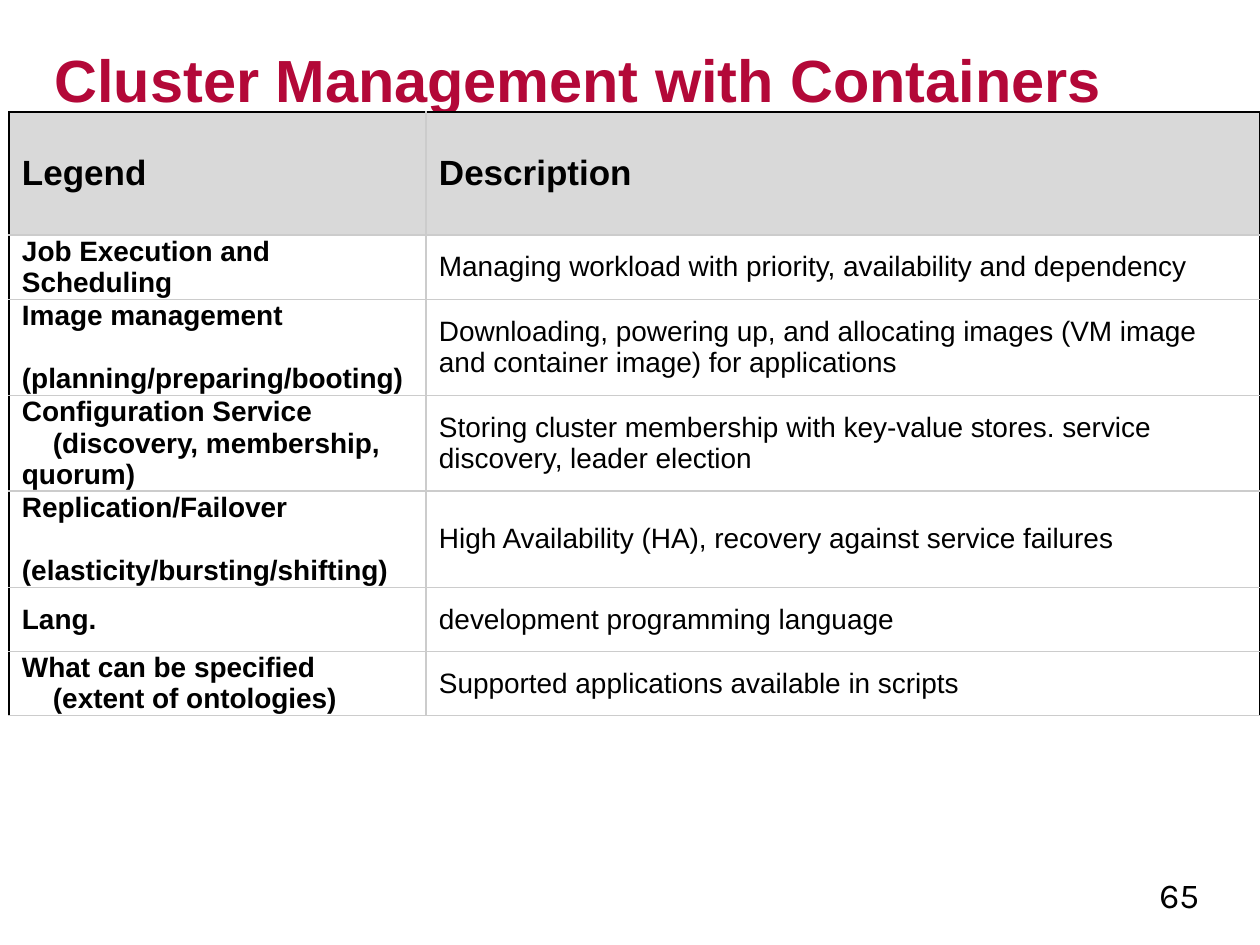
import lxml.etree
import pptx
import pptx.dml.color
import pptx.enum.text
import pptx.oxml.ns
import pptx.util

CRIMSON = pptx.dml.color.RGBColor(0xB3, 0x08, 0x38)
BLACK = pptx.dml.color.RGBColor(0, 0, 0)
RULE_GRAY = pptx.dml.color.RGBColor(0xCC, 0xCC, 0xCC)
HEADER_GRAY = pptx.dml.color.RGBColor(0xD9, 0xD9, 0xD9)
MIDDLE = pptx.enum.text.MSO_ANCHOR.MIDDLE

COLUMN_WIDTHS = (417, 834)
HEADER_HEIGHT, ROW_HEIGHT = 123, 64
INDENT = 31
LINE_GAP = 18.4
ROWS = [
    (["Legend"], "Description"),
    (["Job Execution and Scheduling"],
     "Managing workload with priority, availability and dependency"),
    (["Image management", "(planning/preparing/booting)"],
     "Downloading, powering up, and allocating images (VM image and container image) for applications"),
    (["Configuration Service", "(discovery, membership, quorum)"],
     "Storing cluster membership with key-value stores. service discovery, leader election"),
    (["Replication/Failover", "(elasticity/bursting/shifting)"],
     "High Availability (HA), recovery against service failures"),
    (["Lang."], "development programming language"),
    (["What can be specified", "(extent of ontologies)"],
     "Supported applications available in scripts"),
]


def px(n):
    """Convert pixels to EMU."""
    return pptx.util.Emu(round(n * 914400 / 126))


def place(sp, left, top, width, height):
    """Set the position and size of a shape."""
    sp.left, sp.top, sp.width, sp.height = px(left), px(top), px(width), px(height)


def add_run(p, text, size, color=BLACK, bold=False, font="Arial"):
    """Add one formatted run to a paragraph."""
    r = p.add_run()
    r.text = text
    r.font.size = pptx.util.Pt(size)
    r.font.name = font
    r.font.bold = bold
    r.font.color.rgb = color


def add_title(slide, text):
    """Fill the title placeholder."""
    sp = slide.shapes.title
    place(sp, 42, 0, 1155, 157)
    tf = sp.text_frame
    tf.word_wrap = True
    tf.auto_size = pptx.enum.text.MSO_AUTO_SIZE.NONE
    tf.vertical_anchor = MIDDLE
    p = tf.paragraphs[0]
    p.alignment = pptx.enum.text.PP_ALIGN.LEFT
    add_run(p, text, 34, CRIMSON, True)


def set_borders(cell, black_sides):
    """Draw the four cell borders, black on the given sides."""
    tc_pr = cell._tc.get_or_add_tcPr()
    for side in "LRTB":
        ln = lxml.etree.SubElement(tc_pr, pptx.oxml.ns.qn(f"a:ln{side}"), w="9525")
        fill = lxml.etree.SubElement(ln, pptx.oxml.ns.qn("a:solidFill"))
        color = BLACK if side in black_sides else RULE_GRAY
        lxml.etree.SubElement(fill, pptx.oxml.ns.qn("a:srgbClr"), val=str(color))


def fill_cell(cell, lines, header, column):
    """Write and format one table cell."""
    cell.vertical_anchor = MIDDLE
    cell.margin_left = cell.margin_right = px(13)
    cell.margin_top = cell.margin_bottom = px(1)
    set_borders(cell, "LR"[column] + ("T" if header else ""))
    if header:
        cell.fill.solid()
        cell.fill.fore_color.rgb = HEADER_GRAY
    else:
        cell.fill.background()
    tf = cell.text_frame
    for i, text in enumerate(lines):
        p = tf.add_paragraph() if i else tf.paragraphs[0]
        if i and "/" in text:
            p.space_before = pptx.util.Pt(LINE_GAP)
        elif i:
            p._p.get_or_add_pPr().set("indent", str(px(INDENT)))
        add_run(p, text, 20 if header else 16, bold=header or column == 0)


def add_legend_table(slide):
    """Add the table of legends and descriptions."""
    frame = slide.shapes.add_table(len(ROWS), 2, px(9), px(112), px(1251), px(636))
    table = frame.table
    table.first_row = table.horz_banding = False
    for column, width in zip(table.columns, COLUMN_WIDTHS):
        column.width = px(width)
    for i, (legend, description) in enumerate(ROWS):
        table.rows[i].height = px(ROW_HEIGHT if i else HEADER_HEIGHT)
        fill_cell(table.cell(i, 0), legend, i == 0, 0)
        fill_cell(table.cell(i, 1), [description], i == 0, 1)
    frame.height = px(636)


def add_page_number(slide, number):
    """Add the page number at the lower right."""
    sp = slide.shapes.add_textbox(px(1147), px(867), px(90), px(40))
    tf = sp.text_frame
    tf.word_wrap = True
    add_run(tf.paragraphs[0], number, 20, font="Karla")


def main():
    """Build and save the slide."""
    prs = pptx.Presentation()
    prs.slide_width, prs.slide_height = px(1260), px(945)
    slide = prs.slides.add_slide(prs.slide_layouts[5])
    add_title(slide, "Cluster Management with Containers")
    add_legend_table(slide)
    add_page_number(slide, "65")
    prs.save("out.pptx")


if __name__ == "__main__":
    main()
